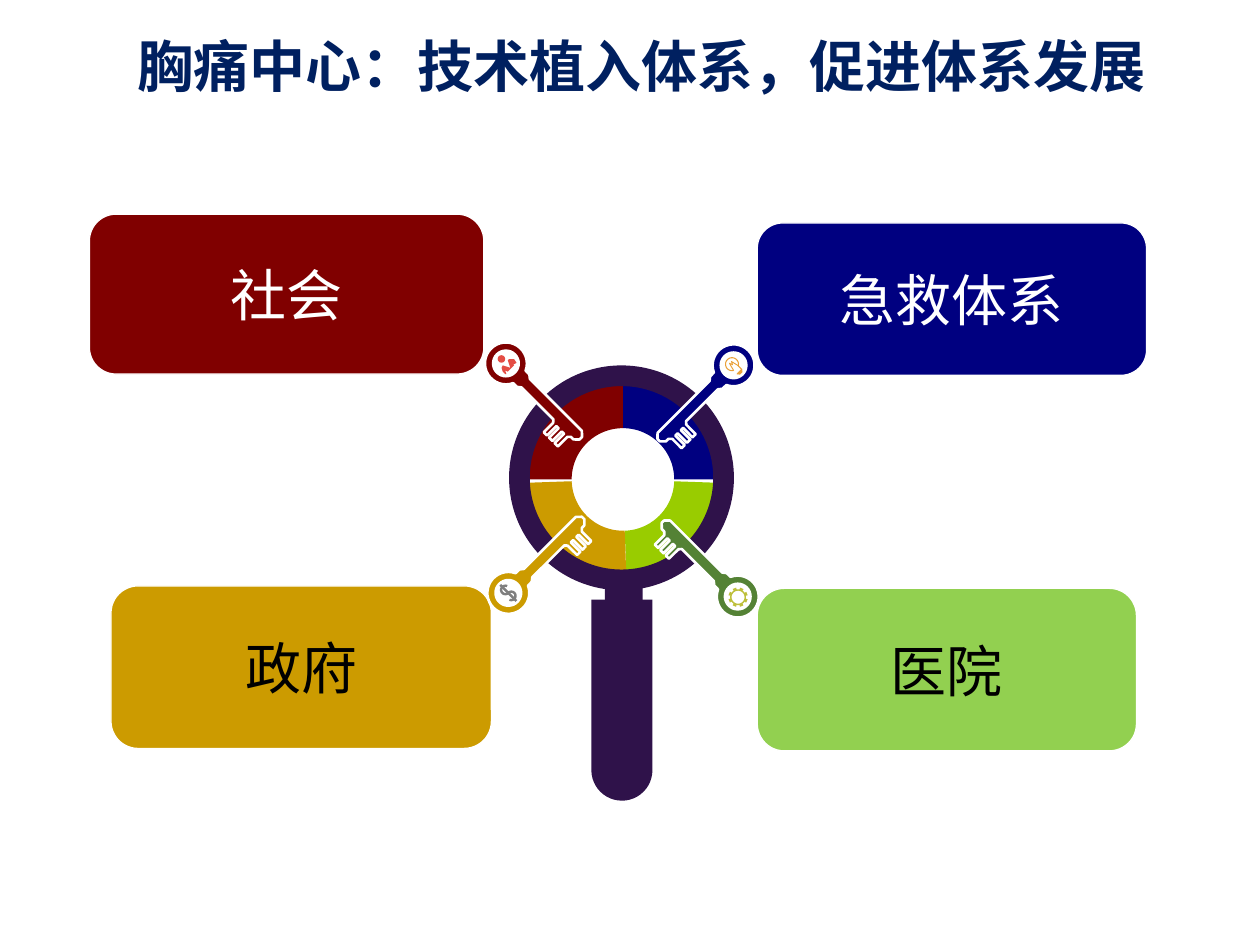
from math import cos, radians, sin, sqrt

from lxml import etree
from pptx import Presentation
from pptx.dml.color import RGBColor
from pptx.enum import shapes as es, text as et
from pptx.oxml import ns
from pptx.util import Pt

KIND = es.MSO_SHAPE
FONT = "Noto Sans CJK SC"
PLUM, RED, NAVY, GOLD = "2F124A", "800000", "000080", "CC9B00"
LIME, GREEN, LEAF, WHITE = "99CC00", "548235", "92D050", "FFFFFF"

deck = Presentation()
deck.slide_width, deck.slide_height = Pt(720), Pt(540)
slide = deck.slides.add_slide(deck.slide_layouts[6])


def arc(x, y, r, start, end, steps=32):
    """Points on a circle; angles in degrees, clockwise from the right."""
    turns = [radians(start + (end - start) * i / steps) for i in range(steps + 1)]
    return [(x + r * cos(t), y + r * sin(t)) for t in turns]


def draw(form, fill, line=None, width=0.75, kind=None):
    """Draw a preset in the box `form`, or a freeform from its loops of points."""
    if kind:
        shape = slide.shapes.add_shape(kind, *[Pt(n) for n in form])
    else:
        loops = [[(x * 100, y * 100) for x, y in loop] for loop in form]
        pen = slide.shapes.build_freeform(*loops[0][0], scale=127.0)
        for i, loop in enumerate(loops):
            if i:
                pen.move_to(*loop[0])
            pen.add_line_segments(loop[1:], close=fill is not None)
        shape = pen.convert_to_shape()
    shape.shadow.inherit = False
    if fill:
        shape.fill.solid()
        shape.fill.fore_color.rgb = RGBColor.from_string(fill)
    else:
        shape.fill.background()
    if line:
        shape.line.color.rgb = RGBColor.from_string(line)
        shape.line.width = Pt(width)
    else:
        shape.line.fill.background()
    return shape


# Title and the four cards
title = slide.shapes.add_textbox(Pt(71.3), Pt(9.4), Pt(607), Pt(60.5))
title.text_frame.text = "胸痛中心：技术植入体系，促进体系发展"
title.text_frame.paragraphs[0].line_spacing = 0.9
labels = [(title, "002060", True)]

cards = [
    ("政府", (63.4, 334.8, 217.4, 92.9), GOLD, "000000"),
    ("社会", (51.1, 122.4, 225.4, 91.4), RED, WHITE),
    ("急救体系", (432.7, 127.4, 222.5, 87.1), NAVY, WHITE),
    ("医院", (432.7, 336.2, 216.7, 92.9), LEAF, "000000"),
]
for name, box, fill, ink in cards:
    card = draw(box, fill, WHITE, kind=KIND.ROUNDED_RECTANGLE)
    card.adjustments[0] = 0.167
    card.text_frame.text = name
    card.text_frame.paragraphs[0].alignment = et.PP_ALIGN.CENTER
    labels.append((card, ink, False))

for shape, ink, bold in labels:
    frame = shape.text_frame
    frame.word_wrap = True
    frame.vertical_anchor = et.MSO_ANCHOR.MIDDLE
    font = frame.paragraphs[0].runs[0].font
    font.name, font.size, font.bold = FONT, Pt(32), bold
    font.color.rgb = RGBColor.from_string(ink)
    props = frame.paragraphs[0].runs[0]._r.get_or_add_rPr()
    etree.SubElement(props, ns.qn("a:ea")).set("typeface", FONT)

# Magnifier: quarters of the lens, handle, neck and rim
mid = (356, 274)
for start, end, fill in [(2, 88, LIME), (270, 360, NAVY), (180, 270, RED), (88, 178, GOLD)]:
    draw([arc(*mid, 58, start, end) + arc(*mid, 29.3, end, start)], fill)
handle = draw((337.9, 342.7, 34.9, 114.8), PLUM, kind=KIND.ROUND_2_SAME_RECTANGLE)
handle.adjustments[0] = 0.5
handle.rotation = 180
draw((345.6, 329.8, 21.6, 28.8), PLUM, kind=KIND.RECTANGLE)
rim = draw((290.9, 208.8, 128.5, 128.5), PLUM, kind=KIND.DONUT)
rim.adjustments[0] = 0.092

# Key outline: along the shaft, then across it, from the middle of the bow
teeth = []
for i in range(3):
    u = 54.5 - 4.4 * i
    teeth += [(u, 4.9), (u, 12.5), (u - 2.6, 12.5), (u - 2.6, 4.9)]
outline = (
    arc(0, 0, 12, 25, 335)
    + [(14, -5), (16, -3.4), (58, -3.4), (60.5, -1), (60.5, 1), (58, 3.4), (56, 3.4)]
    + teeth
    + [(41.8, 3.4), (16, 3.4), (14, 5)]
)
hole = arc(0, 0, 7.3, 0, 360)

# Bow centre, then the way to the lens across and down
keys = [
    (290.5, 338.8, 1, -1, GOLD),
    (289.1, 207.7, 1, 1, RED),
    (419.2, 208.8, -1, 1, NAVY),
    (421.6, 340.9, -1, -1, GREEN),
]
for x, y, right, down, fill in keys:
    loops = [
        [(x + right * (u - down * v) / sqrt(2), y + down * (u + down * v) / sqrt(2))
         for u, v in loop]
        for loop in (outline, hole)
    ]
    draw(loops, fill, WHITE, 1.5)

# Dollar sign
x, y = 290.5, 338.8
curve = arc(x, y - 2.4, 2.4, -20, -270) + arc(x, y + 2.4, 2.4, -90, 160)
sign = draw([curve, [(x, y - 6.5), (x, y + 6.5)]], None, "7F7F7F", 1.4)
sign.rotation = -45

# Light bulb
x, y, amber = 418.3, 208.1, "EAA13A"
draw([arc(x, y, 3.7, 75, 375) + [(x + 5.5, y + 3), (x + 3, y + 5.5)]], None, amber, 0.6)
draw([[(x + 1, y + 3.7), (x - 1.5, y - 0.5), (x + 0.3, y + 0.3), (x - 0.3, y - 1.5),
       (x + 3.7, y + 1)]], None, amber, 0.5)
draw([[(x + 5.7, y + 2.5), (x + 6, y + 4.5), (x + 4.5, y + 6), (x + 2.5, y + 5.7)]], amber)

# Gear
x, y = 421.8, 341.3
rim = []
for turn in range(0, 360, 45):
    rim += arc(x, y, 5.6, turn - 11, turn - 33, 1)[::-1]
    rim += arc(x, y, 4.5, turn - 11, turn + 11, 4)
draw([rim, arc(x, y, 3.7, 0, 360)], "BDBF3A")

# Linked dots
coral = "E44D44"
draw((284.4, 203, 4.3, 4.3), coral, kind=KIND.OVAL)
draw([[(289.4, 213.8), (288.7, 211.7), (290.2, 212.4), (293.8, 208.8), (293, 207.4),
       (293.8, 208.1), (295.2, 207.4), (293.8, 205.2), (290.9, 205.2), (290.2, 205.9),
       (291.6, 210.2), (287.3, 208.8), (286.6, 210.2), (287.3, 212.4), (288.7, 213.8)]], coral)

deck.save("out.pptx")
